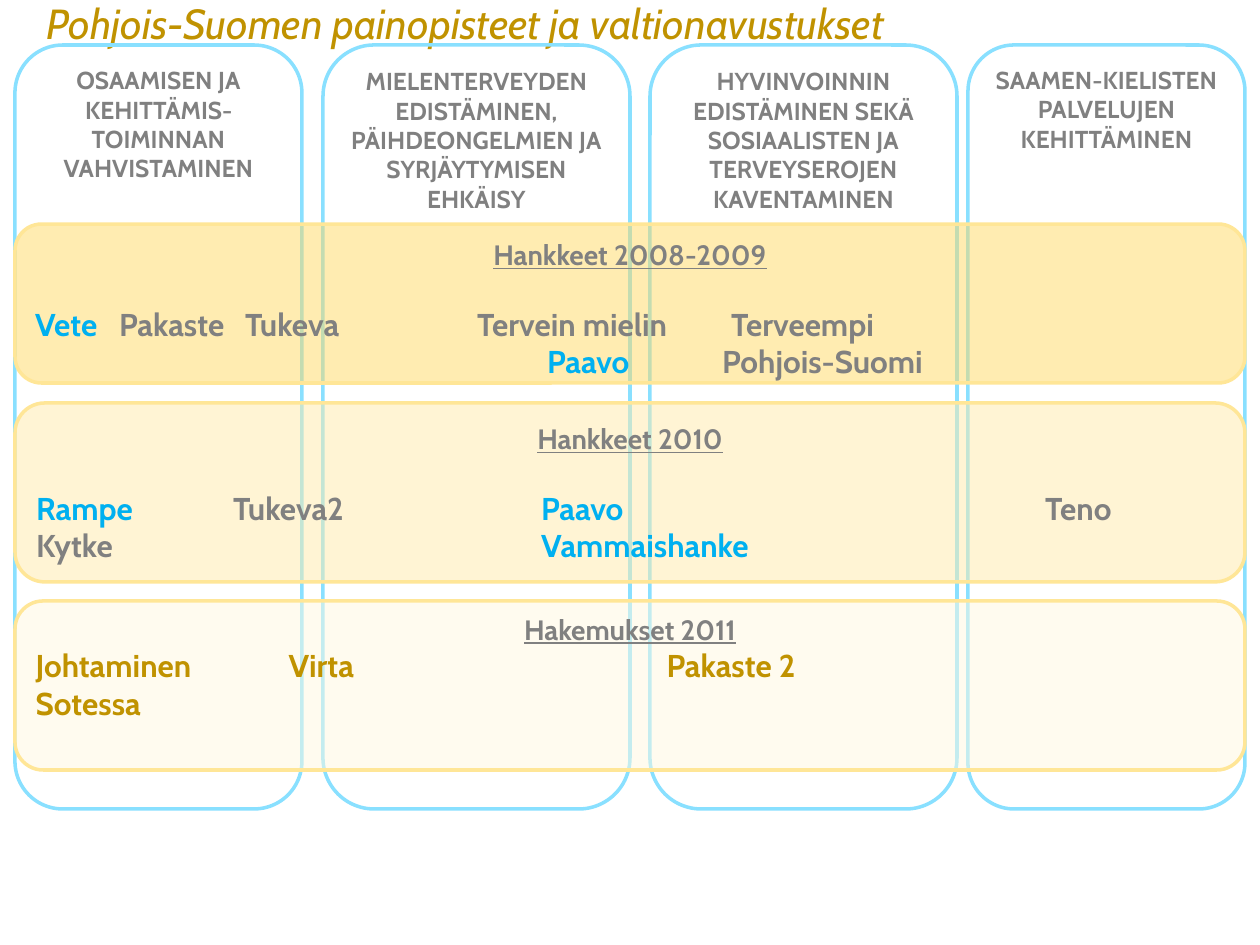
"""Builds the slide on focus areas and state grants in Northern Finland."""
from dataclasses import dataclass

from lxml import etree
from pptx import Presentation
from pptx import util as u
from pptx.dml.color import RGBColor
from pptx.enum import shapes, text
from pptx.oxml.ns import qn


@dataclass(frozen=True)
class Theme:
    """Colours and type sizes."""
    font: str = "Cabin"
    gray: str = "808080"
    blue: str = "00B0F0"
    gold: str = "C09200"
    column_line: str = "89E0FF"
    band_line: str = "FFE697"
    title: int = 24
    column: int = 14
    heading: int = 16
    project: int = 18
    line: int = 2
    row_gap: int = 19


T = Theme()
TEXT_LEFT = 35
COLUMN_TOP, COLUMN_HEIGHT = 45, 764
BAND_LEFT, BAND_WIDTH = 15, 1230

COLUMNS = [
    (15, 287, "OSAAMISEN JA KEHITTÄMIS-TOIMINNAN VAHVISTAMINEN"),
    (323, 307, "MIELENTERVEYDEN EDISTÄMINEN, PÄIHDEONGELMIEN JA SYRJÄYTYMISEN EHKÄISY"),
    (650, 307, "HYVINVOINNIN EDISTÄMINEN SEKÄ SOSIAALISTEN JA TERVEYSEROJEN KAVENTAMINEN"),
    (968, 277, "SAAMEN-KIELISTEN PALVELUJEN KEHITTÄMINEN"),
]

BANDS = [
    dict(y=224, h=159, fill="FFDA65", inset=6, gap=T.row_gap, heading="Hankkeet 2008-2009", rows=[
        [(TEXT_LEFT, "Vete", T.blue), (119, "Pakaste", T.gray), (245, "Tukeva", T.gray),
         (477, "Tervein mielin", T.gray), (731, "Terveempi", T.gray)],
        [(547, "Paavo", T.blue), (722, "Pohjois-Suomi", T.gray)]]),
    dict(y=403, h=179, fill="FFEBAB", inset=10, gap=T.row_gap, heading="Hankkeet 2010", rows=[
        [(TEXT_LEFT, "Rampe", T.blue), (232, "Tukeva2", T.gray),
         (540, "Paavo", T.blue), (1044, "Teno", T.gray)],
        [(TEXT_LEFT, "Kytke", T.gray), (540, "Vammaishanke", T.blue)]]),
    dict(y=601, h=169, fill="FFF8E1", inset=3, gap=0, heading="Hakemukset 2011", rows=[
        [(TEXT_LEFT, "Johtaminen", T.gold), (288, "Virta", T.gold), (666, "Pakaste 2", T.gold)],
        [(TEXT_LEFT, "Sotessa", T.gold)]]),
]


def px(n):
    """Turn pixels into EMU."""
    return u.Emu(round(n * 914400 / 126))


def write(p, words, size, color, bold=True, italic=False, underline=False):
    """Add a formatted run to a paragraph."""
    r = p.add_run()
    r.text = words
    r.font.name, r.font.size = T.font, u.Pt(size)
    r.font.bold, r.font.italic, r.font.underline = bold, italic, underline
    r.font.color.rgb = RGBColor.from_string(color)


class Deck:
    """Holds the theme and the current slide."""

    def __init__(self, prs, theme):
        """Start a title-only slide."""
        self.theme = theme
        self.slide = prs.slides.add_slide(prs.slide_layouts[5])

    def title(self, words, x, y, w, h):
        """Place and format the title."""
        sp = self.slide.shapes.title
        sp.left, sp.top, sp.width, sp.height = map(px, (x, y, w, h))
        tf = sp.text_frame
        tf.auto_size = text.MSO_AUTO_SIZE.NONE
        tf.vertical_anchor = text.MSO_ANCHOR.MIDDLE
        p = tf.paragraphs[0]
        p.alignment = text.PP_ALIGN.LEFT
        write(p, words, self.theme.title, self.theme.gold, bold=False, italic=True)

    def panel(self, x, y, w, h, line, fill=None):
        """Draw a rounded panel and return its text frame."""
        sp = self.slide.shapes.add_shape(
            shapes.MSO_SHAPE.ROUNDED_RECTANGLE, *map(px, (x, y, w, h)))
        sp.shadow.inherit = False
        sp.line.color.rgb = RGBColor.from_string(line)
        sp.line.width = u.Pt(self.theme.line)
        if fill:
            sp.fill.solid()
            sp.fill.fore_color.rgb = RGBColor.from_string(fill)
            color = sp.fill._xPr.find(qn("a:solidFill")).find(qn("a:srgbClr"))
            etree.SubElement(color, qn("a:alpha"), val="50000")
        else:
            sp.fill.background()
        tf = sp.text_frame
        tf.word_wrap = True
        tf.vertical_anchor = text.MSO_ANCHOR.TOP
        tf.paragraphs[0].alignment = text.PP_ALIGN.CENTER
        return tf

    def column(self, x, w, words):
        """Draw one focus area."""
        tf = self.panel(x, COLUMN_TOP, w, COLUMN_HEIGHT, self.theme.column_line)
        write(tf.paragraphs[0], words, self.theme.column, self.theme.gray)

    def band(self, y, h, fill, inset, gap, heading, rows):
        """Draw one period with its rows of projects."""
        tf = self.panel(BAND_LEFT, y, BAND_WIDTH, h, self.theme.band_line, fill)
        tf.margin_top = px(inset)
        write(tf.paragraphs[0], heading, self.theme.heading, self.theme.gray, underline=True)
        for i, row in enumerate(rows):
            p = tf.add_paragraph()
            p.alignment = text.PP_ALIGN.LEFT
            p.space_before = u.Pt(0 if i else gap)
            self.tab_row(p, row)

    def tab_row(self, p, row):
        """Write projects at their tab stops."""
        stops = [x - TEXT_LEFT for x, _, _ in row if x > TEXT_LEFT]
        if stops:
            tabs = etree.SubElement(p._p.get_or_add_pPr(), qn("a:tabLst"))
            for stop in stops:
                etree.SubElement(tabs, qn("a:tab"), pos=str(px(stop)), algn="l")
        for x, words, color in row:
            lead = "\t" if x > TEXT_LEFT else ""
            write(p, lead + words, self.theme.project, color)


def main():
    """Build and save the slide."""
    prs = Presentation()
    prs.slide_width, prs.slide_height = px(1260), px(945)
    deck = Deck(prs, T)
    for column in COLUMNS:
        deck.column(*column)
    for band in BANDS:
        deck.band(**band)
    deck.title("Pohjois-Suomen painopisteet ja valtionavustukset", 34, 0, 1071, 45)
    prs.save("out.pptx")


if __name__ == "__main__":
    main()
